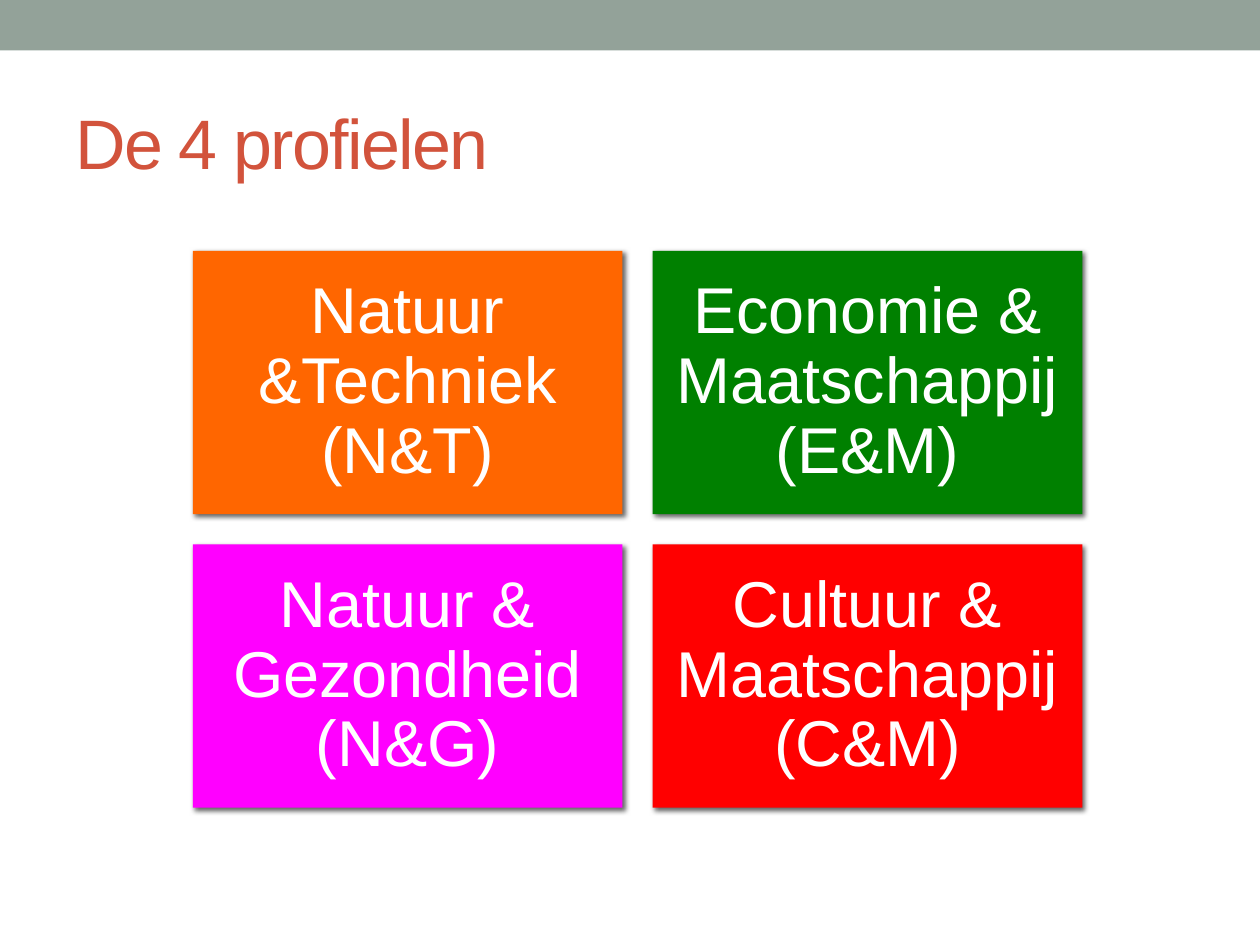
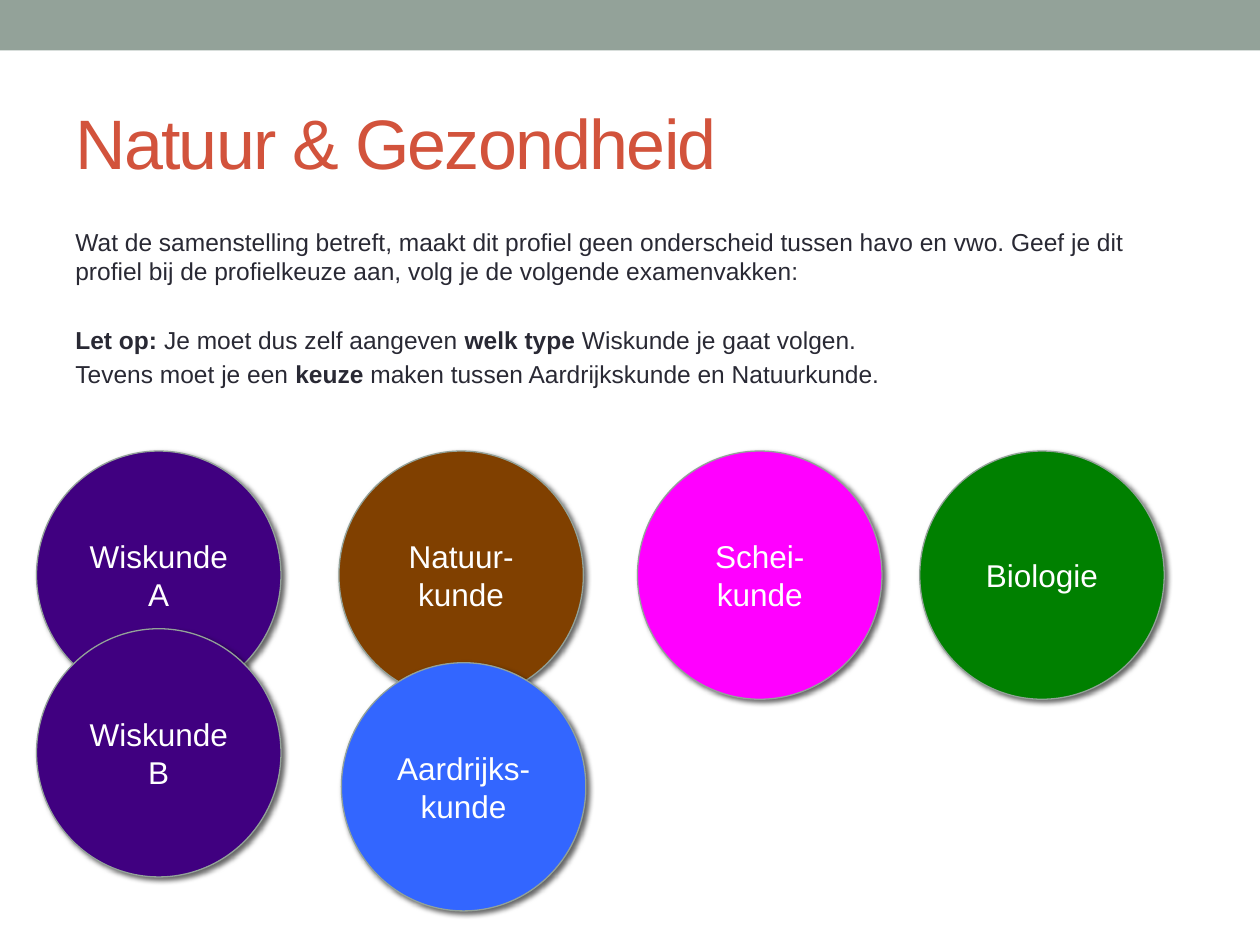
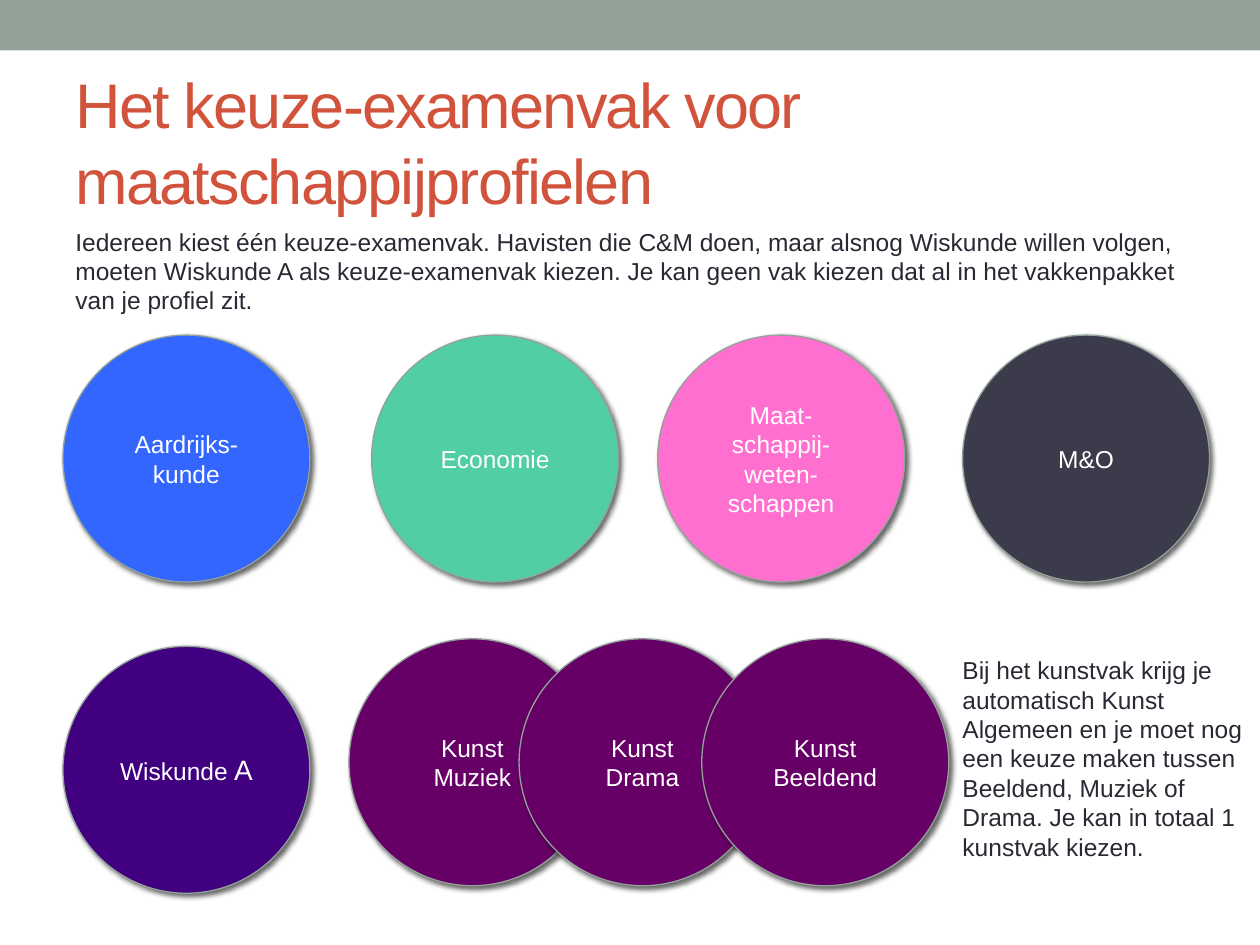
from lxml import etree
from pptx import Presentation
from pptx import util as u
from pptx.dml.color import RGBColor
from pptx.enum import shapes, text
from pptx.oxml import ns

THEME = {
    "font": "Arial",
    "band": "93A299", "title": "D2533C", "body": "292934", "white": "FFFFFF",
    "orange": "FF6600", "green": "008000", "magenta": "FF00FF", "red": "FF0000",
    "indigo": "400080", "brown": "804000", "blue": "3366FF", "mint": "51CEA3",
    "pink": "FF6FCF", "slate": "3B3B4B", "plum": "660066",
    "title_size": 40, "long_title_size": 36, "tile_size": 37,
    "circle_size": 18, "small_size": 14, "letter_size": 16,
}
CENTER = text.PP_ALIGN.CENTER
MIDDLE = text.MSO_ANCHOR.MIDDLE


def write(sp, paragraphs, size, color, frame=None, para=None):
    """Fill a shape with paragraphs, each a list of (text, run font values)."""
    tf = sp.text_frame
    for name, value in {"word_wrap": True, **(frame or {})}.items():
        setattr(tf, name, value)
    for i, runs in enumerate(paragraphs):
        p = tf.add_paragraph() if i else tf.paragraphs[0]
        for name, value in (para or {}).items():
            setattr(p, name, value)
        for words, extra in runs:
            r = p.add_run()
            r.text = words
            r.font.color.rgb = RGBColor.from_string(THEME[color])
            values = {"name": THEME["font"], "size": u.Pt(size), **extra}
            for name, value in values.items():
                setattr(r.font, name, value)
    return tf


def add_block(s, kind, box, fill, shadow=True):
    """Add a filled shape, with a soft shadow to the lower right if wanted."""
    sp = s.shapes.add_shape(kind, *map(u.Inches, box))
    sp.fill.solid()
    sp.fill.fore_color.rgb = RGBColor.from_string(THEME[fill])
    sp.line.fill.background()
    sp.shadow.inherit = False
    if shadow:
        effects = sp._element.spPr.find(ns.qn("a:effectLst"))
        outer = etree.SubElement(effects, ns.qn("a:outerShdw"), blurRad="38100",
                                 dist="25400", dir="2700000", rotWithShape="0")
        black = etree.SubElement(outer, ns.qn("a:srgbClr"), val="000000")
        etree.SubElement(black, ns.qn("a:alpha"), val="60000")
    return sp


prs = Presentation()
prs.slide_width, prs.slide_height = u.Inches(10), u.Inches(7.5)

# Shared band and title
titles = [
    ("De 4 profielen", THEME["title_size"]),
    ("Natuur & Gezondheid", THEME["title_size"]),
    ("Het keuze-examenvak voor maatschappijprofielen", THEME["long_title_size"]),
]
slides = []
for title, size in titles:
    s = prs.slides.add_slide(prs.slide_layouts[6])
    add_block(s, shapes.MSO_SHAPE.RECTANGLE, (0, 0, 10, 0.4), "band", shadow=False)
    sp = s.shapes.add_textbox(*map(u.Inches, (0.5, 0.58, 9, 1.08)))
    tf = write(sp, [[(title, {})]], size, "title", {"vertical_anchor": MIDDLE})
    tf.paragraphs[0].runs[0].font._element.set("spc", "-100")
    slides.append(s)
profiles, health, electives = slides

# Four profiles in a two by two grid
tiles = [
    ("Natuur &Techniek (N&T)", "orange"),
    ("Economie & Maatschappij (E&M)", "green"),
    ("Natuur & Gezondheid (N&G)", "magenta"),
    ("Cultuur & Maatschappij (C&M)", "red"),
]
tile_w, tile_h, gap = 3.41, 2.09, 0.24
tile_frame = {"vertical_anchor": MIDDLE}
for side in ("left", "right", "top", "bottom"):
    tile_frame[f"margin_{side}"] = u.Inches(0.15)
for i, (label, fill) in enumerate(tiles):
    row, col = divmod(i, 2)
    box = (1.53 + col * (tile_w + gap), 1.99 + row * (tile_h + gap), tile_w, tile_h)
    sp = add_block(profiles, shapes.MSO_SHAPE.RECTANGLE, box, fill)
    write(sp, [[(label, {})]], THEME["tile_size"], "white", tile_frame,
          {"alignment": CENTER, "line_spacing": 0.9})

# Body texts
bold = {"bold": True}
health_text = [
    [("Wat de samenstelling betreft, maakt dit profiel geen onderscheid tussen havo en vwo. "
      "Geef je dit profiel bij de profielkeuze aan, volg je de volgende examenvakken:", {})],
    [("Let op: ", bold), ("Je moet dus zelf aangeven ", {}), ("welk type ", bold),
     ("Wiskunde je gaat volgen.", {})],
    [("Tevens moet je een ", {}), ("keuze", bold),
     (" maken tussen Aardrijkskunde en Natuurkunde.", {})],
]
electives_text = [[(
    "Iedereen kiest één keuze-examenvak. Havisten die C&M doen, maar alsnog Wiskunde willen "
    "volgen, moeten Wiskunde A als keuze-examenvak kiezen. Je kan geen vak kiezen dat al in "
    "het vakkenpakket van je profiel zit.", {})]]
art_text = [[(
    "Bij het kunstvak krijg je automatisch Kunst Algemeen en je moet nog een keuze maken "
    "tussen Beeldend, Muziek of Drama. Je kan in totaal 1 kunstvak kiezen.", {})]]
bodies = [
    (health, (0.5, 1.75, 9, 5.75), health_text),
    (electives, (0.5, 1.75, 9, 0.9), electives_text),
    (electives, (7.54, 5.15, 2.62, 1.99), art_text),
]
for s, box, paragraphs in bodies:
    sp = s.shapes.add_textbox(*map(u.Inches, box))
    tf = write(sp, paragraphs, THEME["small_size"], "body")
    for p, before in zip(tf.paragraphs[1:], (22.5, 2.8)):
        p.space_before = u.Pt(before)

# Subjects as circles: left, top, fill, one text per paragraph
health_circles = [
    (0.29, 3.58, "indigo", ["Wiskunde A"]),
    (2.69, 3.58, "brown", ["Natuur-kunde"]),
    (5.06, 3.58, "magenta", ["Schei-kunde"]),
    (7.3, 3.58, "green", ["Biologie"]),
    (2.71, 5.26, "blue", ["Aardrijks-kunde"]),
    (0.29, 4.99, "indigo", ["Wiskunde B"]),
]
elective_circles = [
    (2.77, 5.07, "plum", ["Kunst", "Muziek"]),
    (4.12, 5.07, "plum", ["Kunst", "Drama"]),
    (5.57, 5.07, "plum", ["Kunst", "Beeldend"]),
    (0.5, 2.66, "blue", ["Aardrijks-kunde"]),
    (2.95, 2.66, "mint", ["Economie"]),
    (5.22, 2.66, "pink", ["Maat-schappij-weten-schappen"]),
    (7.64, 2.66, "slate", ["M&O"]),
    (0.5, 5.13, "indigo", ["Wiskunde"]),
]
groups = [
    (health, health_circles, 1.94, 1.97, THEME["circle_size"]),
    (electives, elective_circles, 1.96, 1.96, THEME["small_size"]),
]
for s, circles, width, height, size in groups:
    for left, top, fill, labels in circles:
        sp = add_block(s, shapes.MSO_SHAPE.OVAL, (left, top, width, height), fill)
        sp.line.color.rgb = RGBColor.from_string(THEME["band"])
        sp.line.width = u.Pt(0.75)
        paragraphs = [[(label, {})] for label in labels]
        if labels == ["Wiskunde"]:
            paragraphs[0].append((" A", {"size": u.Pt(THEME["letter_size"])}))
        write(sp, paragraphs, size, "white", {"vertical_anchor": MIDDLE},
              {"alignment": CENTER})

prs.save("out.pptx")
